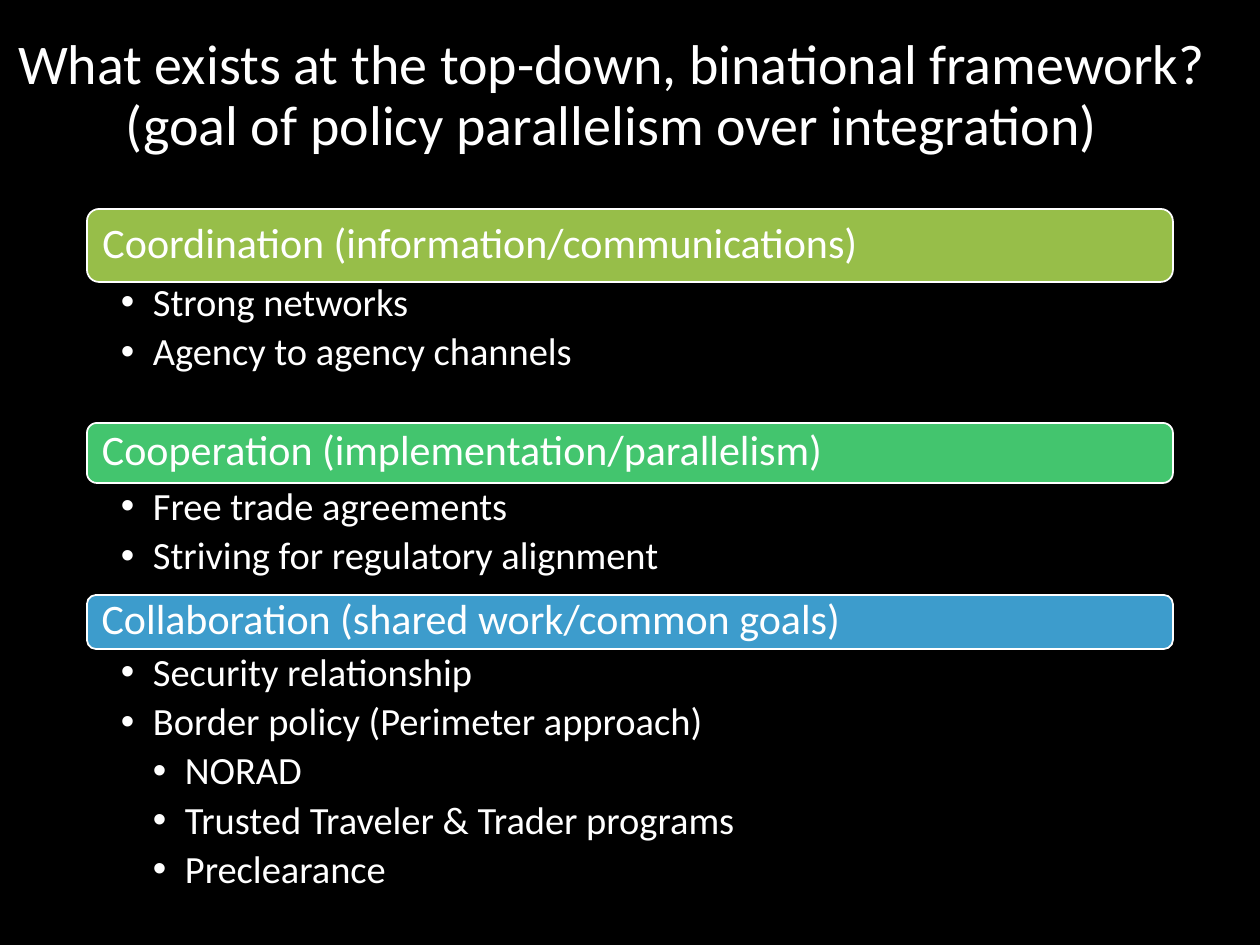
from dataclasses import dataclass

from lxml.etree import SubElement
from pptx import Presentation
from pptx.dml.color import RGBColor
from pptx.enum.shapes import MSO_SHAPE
from pptx.enum.text import MSO_ANCHOR, PP_ALIGN
from pptx.oxml.ns import qn
from pptx.util import Pt

EMU_PER_PX = 914400 / 126


@dataclass(frozen=True)
class Theme:
    """Colours and type sizes of the slide."""

    font: str = "Calibri"
    background: str = "000000"
    text: str = "FFFFFF"
    coordination: str = "97BE49"
    cooperation: str = "43C56E"
    collaboration: str = "3D9CCC"
    title_size: int = 32
    heading_size: int = 24
    bullet_size: int = 22
    line_spacing: float = 0.9
    bullet_gap: float = 4.4


THEME = Theme()


def px(length):
    """Turn pixels into EMU."""
    return round(length * EMU_PER_PX)


def place(box):
    """Turn a pixel box into EMU."""
    return [px(length) for length in box]


def set_frame(frame, anchor, insets):
    """Set wrapping, anchor and insets (left, top, right, bottom)."""
    frame.word_wrap = True
    frame.vertical_anchor = anchor
    frame.margin_left, frame.margin_top, frame.margin_right, frame.margin_bottom = place(insets)


def add_text(paragraph, text, size):
    """Add one run in the theme's font and text colour."""
    paragraph.line_spacing = THEME.line_spacing
    run = paragraph.add_run()
    run.text = text
    run.font.name = THEME.font
    run.font.size = Pt(size)
    run.font.color.rgb = RGBColor.from_string(THEME.text)


def add_bullet(paragraph, level):
    """Give a paragraph a hanging round bullet at its level."""
    paragraph.level = level
    properties = paragraph._p.get_or_add_pPr()
    properties.set("marL", str(px(32 * level)))
    properties.set("indent", str(px(-32)))
    SubElement(properties, qn("a:buFont"), typeface="Arial")
    SubElement(properties, qn("a:buChar"), char="•")


def add_title(slide, box, lines):
    """Place the centred title, one line per text."""
    frame = slide.shapes.add_textbox(*place(box)).text_frame
    set_frame(frame, MSO_ANCHOR.MIDDLE, (0, 0, 0, 0))
    paragraph = frame.paragraphs[0]
    paragraph.alignment = PP_ALIGN.CENTER
    for index, line in enumerate(lines):
        if index:
            paragraph.add_line_break()
        add_text(paragraph, line, THEME.title_size)


def add_heading(slide, box, text, color):
    """Place a rounded bar with its heading."""
    bar = slide.shapes.add_shape(MSO_SHAPE.ROUNDED_RECTANGLE, *place(box))
    bar.shadow.inherit = False
    bar.fill.solid()
    bar.fill.fore_color.rgb = RGBColor.from_string(color)
    bar.line.color.rgb = RGBColor.from_string(THEME.text)
    bar.line.width = Pt(1)
    set_frame(bar.text_frame, MSO_ANCHOR.MIDDLE, (12, 0, 12, 2))
    paragraph = bar.text_frame.paragraphs[0]
    paragraph.alignment = PP_ALIGN.LEFT
    add_text(paragraph, text, THEME.heading_size)


def add_bullets(slide, box, bullets):
    """Place a list of (level, text) bullets."""
    frame = slide.shapes.add_textbox(*place(box)).text_frame
    set_frame(frame, MSO_ANCHOR.TOP, (34, 4, 21, 4))
    for index, (level, text) in enumerate(bullets):
        paragraph = frame.add_paragraph() if index else frame.paragraphs[0]
        add_bullet(paragraph, level)
        paragraph.space_after = Pt(THEME.bullet_gap)
        add_text(paragraph, text, THEME.bullet_size)


def add_section(slide, box, bar_height, overlap, heading, color, bullets):
    """Place a heading bar with its bullets below it."""
    left, top, width, height = box
    add_heading(slide, (left, top, width, bar_height), heading, color)
    list_offset = bar_height - overlap
    add_bullets(slide, (left, top + list_offset, width, height - list_offset), bullets)


def main():
    """Build and save the slide."""
    deck = Presentation()
    deck.slide_width, deck.slide_height = px(1260), px(945)
    slide = deck.slides.add_slide(deck.slide_layouts[6])
    slide.background.fill.solid()
    slide.background.fill.fore_color.rgb = RGBColor.from_string(THEME.background)

    add_title(slide, (0, 36, 1224, 122), (
        "What exists at the top-down, binational framework?",
        "(goal of policy parallelism over integration)",
    ))
    sections = (
        (209, 213, 73, 3, "Coordination (information/communications)", THEME.coordination,
         ((1, "Strong networks"), (1, "Agency to agency channels"))),
        (423, 172, 60, 0, "Cooperation (implementation/parallelism)", THEME.cooperation,
         ((1, "Free trade agreements"), (1, "Striving for regulatory alignment"))),
        (595, 312, 54, 0, "Collaboration (shared work/common goals)", THEME.collaboration,
         ((1, "Security relationship"), (1, "Border policy (Perimeter approach)"),
          (2, "NORAD"), (2, "Trusted Traveler & Trader programs"), (2, "Preclearance"))),
    )
    for top, height, *content in sections:
        add_section(slide, (87, top, 1086, height), *content)
    deck.save("out.pptx")


if __name__ == "__main__":
    main()
